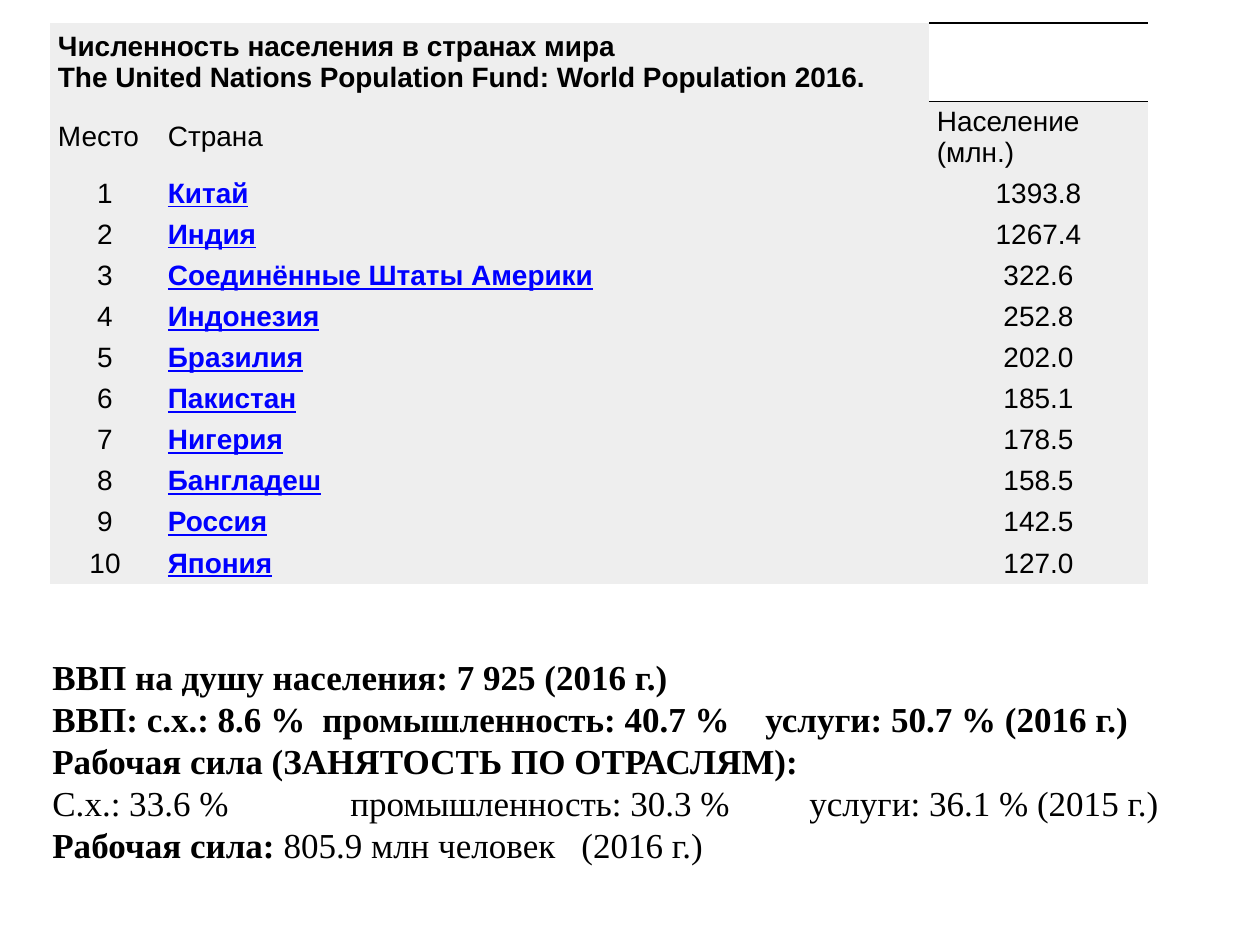
from dataclasses import dataclass

import pptx
import pptx.dml.color
import pptx.enum.text
import pptx.oxml
import pptx.oxml.ns
import pptx.util

PX = 914400 // 126
BLACK, LINK_BLUE, PALE_GREY = "000000", "0000FF", "EEEEEE"
CENTER = pptx.enum.text.PP_ALIGN.CENTER
LEFT = pptx.enum.text.PP_ALIGN.LEFT
TABLE_FONT = {"name": "Arial", "size": pptx.util.Pt(16), "bold": False}
HEADING_FONT = TABLE_FONT | {"bold": True}
COUNTRY_FONT = HEADING_FONT | {"underline": True}
FACTS_FONT = {"name": "Times New Roman", "size": pptx.util.Pt(20)}
CELL_FORMAT = {
    "margin_left": 8 * PX,
    "margin_right": 8 * PX,
    "margin_top": 5 * PX,
    "margin_bottom": 5 * PX,
    "vertical_anchor": pptx.enum.text.MSO_ANCHOR.MIDDLE,
}


@dataclass
class Country:
    """A country with its population in millions."""
    name: str
    population: str


@dataclass
class Fact:
    """A line of economic facts: a bold part, a regular part and tab stops in px."""
    bold: str = ""
    regular: str = ""
    stops: tuple[int, ...] = ()


TITLE = (
    "Численность населения в странах мира",
    "The United Nations Population Fund: World Population 2016.",
)
HEADINGS = ("Место", "Страна", "Население (млн.)")
COUNTRIES = [
    Country("Китай", "1393.8"),
    Country("Индия", "1267.4"),
    Country("Соединённые Штаты Америки", "322.6"),
    Country("Индонезия", "252.8"),
    Country("Бразилия", "202.0"),
    Country("Пакистан", "185.1"),
    Country("Нигерия", "178.5"),
    Country("Бангладеш", "158.5"),
    Country("Россия", "142.5"),
    Country("Япония", "127.0"),
]
FACTS = [
    Fact("ВВП на душу населения: 7 925 (2016 г.)"),
    Fact("ВВП: c.х.: 8.6 %\tпромышленность: 40.7 %\tуслуги: 50.7 % (2016 г.)",
         stops=(270, 713)),
    Fact("Рабочая сила (ЗАНЯТОСТЬ ПО ОТРАСЛЯМ):"),
    Fact(regular="С.х.: 33.6 %\tпромышленность: 30.3 %\tуслуги: 36.1 % (2015 г.)",
         stops=(298, 757)),
    Fact("Рабочая сила: ", "805.9 млн человек\t(2016 г.)", (529,)),
]


def rgb(value: str) -> pptx.dml.color.RGBColor:
    """Turn a hex string into a colour."""
    return pptx.dml.color.RGBColor.from_string(value)


def apply(target: object, values: dict) -> None:
    """Set each attribute given in a dict of format values."""
    for name, value in values.items():
        setattr(target, name, value)


def add_run(paragraph, text: str, font: dict, color: str = BLACK) -> None:
    """Append a formatted run to a paragraph."""
    run = paragraph.add_run()
    run.text = text
    apply(run.font, font)
    run.font.color.rgb = rgb(color)


def set_borders(cell, widths: dict[str, float]) -> None:
    """Draw black borders on the named sides of a cell and clear the others."""
    properties = cell._tc.get_or_add_tcPr()
    for side in "LRTB":
        width = pptx.util.Pt(widths.get(side, 0))
        paint = f'<a:solidFill><a:srgbClr val="{BLACK}"/></a:solidFill>' if width else "<a:noFill/>"
        properties.append(pptx.oxml.parse_xml(
            f'<a:ln{side} {pptx.oxml.ns.nsdecls("a")} w="{width}">{paint}</a:ln{side}>'))


def fill_cell(cell, lines: tuple[str, ...], font: dict = TABLE_FONT,
              align: pptx.enum.text.PP_ALIGN = LEFT, color: str = BLACK) -> None:
    """Write lines of text into a cell."""
    for index, line in enumerate(lines):
        frame = cell.text_frame
        paragraph = frame.add_paragraph() if index else frame.paragraphs[0]
        paragraph.alignment = align
        add_run(paragraph, line, font, color)


def add_population_table(slide) -> None:
    """Add the table of the most populous countries."""
    frame = slide.shapes.add_table(len(COUNTRIES) + 2, 3, 50 * PX, 23 * PX, 1098 * PX, 601 * PX)
    table = frame.table
    apply(table, {"first_row": False, "horz_banding": False})
    for column, width in zip(table.columns, (110, 769, 219)):
        column.width = width * PX
    for index, row in enumerate(table.rows):
        row.height = (38 if index else 78) * PX
    frame.height = 601 * PX

    blank = table.cell(0, 2)
    below_blank = table.cell(1, 2)
    for cell in table.iter_cells():
        apply(cell, CELL_FORMAT)
        if cell == blank:
            set_borders(cell, {"T": 1, "B": 0.5})
            cell.fill.background()
        else:
            set_borders(cell, {"T": 0.5} if cell == below_blank else {})
            cell.fill.solid()
            cell.fill.fore_color.rgb = rgb(PALE_GREY)

    table.cell(0, 0).merge(table.cell(0, 1))
    fill_cell(table.cell(0, 0), TITLE, HEADING_FONT)
    for column, heading in enumerate(HEADINGS):
        fill_cell(table.cell(1, column), (heading,))
    for place, country in enumerate(COUNTRIES, 1):
        fill_cell(table.cell(place + 1, 0), (str(place),), align=CENTER)
        fill_cell(table.cell(place + 1, 1), (country.name,), COUNTRY_FONT, color=LINK_BLUE)
        fill_cell(table.cell(place + 1, 2), (country.population,), align=CENTER)


def add_tab_stops(paragraph, stops: tuple[int, ...]) -> None:
    """Give a paragraph left tab stops."""
    tabs = "".join(f'<a:tab pos="{stop * PX}" algn="l"/>' for stop in stops)
    paragraph._p.get_or_add_pPr().append(pptx.oxml.parse_xml(
        f'<a:tabLst {pptx.oxml.ns.nsdecls("a")}>{tabs}</a:tabLst>'))


def add_facts(slide) -> None:
    """Add the economic facts below the table."""
    frame = slide.shapes.add_textbox(40 * PX, 649 * PX, 1181 * PX, 224 * PX).text_frame
    apply(frame, {"word_wrap": True,
                  "auto_size": pptx.enum.text.MSO_AUTO_SIZE.SHAPE_TO_FIT_TEXT})
    for index, fact in enumerate(FACTS):
        paragraph = frame.add_paragraph() if index else frame.paragraphs[0]
        if fact.stops:
            add_tab_stops(paragraph, fact.stops)
        for text, bold in ((fact.bold, True), (fact.regular, False)):
            if text:
                add_run(paragraph, text, FACTS_FONT | {"bold": bold})


def main() -> None:
    """Build and save the slide."""
    presentation = pptx.Presentation()
    apply(presentation, {"slide_width": pptx.util.Inches(10),
                         "slide_height": pptx.util.Inches(7.5)})
    slide = presentation.slides.add_slide(presentation.slide_layouts[6])
    add_population_table(slide)
    add_facts(slide)
    presentation.save("out.pptx")


if __name__ == "__main__":
    main()
